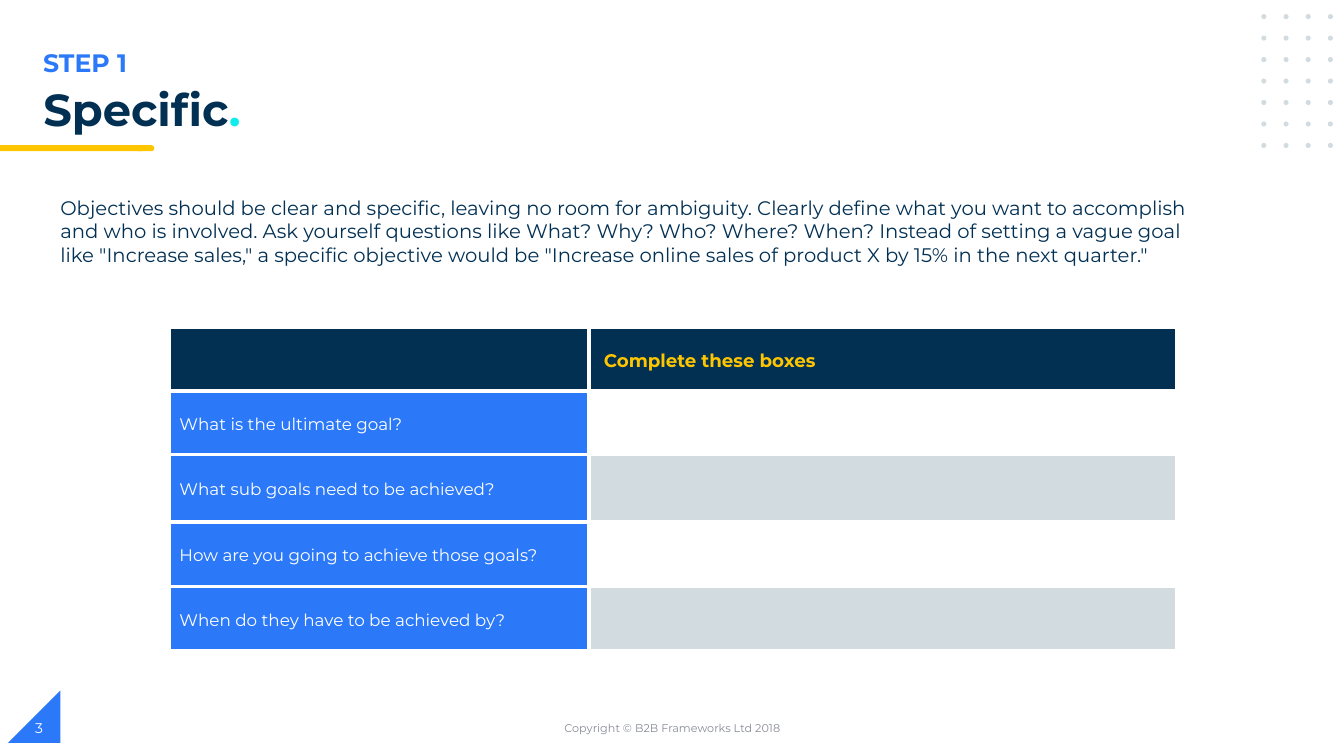
from dataclasses import dataclass

from lxml import etree
from pptx import Presentation
from pptx.dml.color import RGBColor
from pptx.enum.shapes import MSO_SHAPE
from pptx.enum.text import MSO_ANCHOR, MSO_AUTO_SIZE, PP_ALIGN
from pptx.oxml.ns import qn
from pptx.shapes.autoshape import Shape
from pptx.slide import Slide
from pptx.table import _Cell
from pptx.text.text import Font, TextFrame
from pptx.util import Inches, Pt

RECTANGLE = MSO_SHAPE.RECTANGLE
TERMINATOR = MSO_SHAPE.FLOWCHART_TERMINATOR
TRIANGLE = MSO_SHAPE.RIGHT_TRIANGLE
OVAL = MSO_SHAPE.OVAL
TOP, MIDDLE = MSO_ANCHOR.TOP, MSO_ANCHOR.MIDDLE
LEFT, CENTER = PP_ALIGN.LEFT, PP_ALIGN.CENTER
NO_AUTOFIT = MSO_AUTO_SIZE.NONE

FONT_NAME = "Montserrat"
COLORS = {
    "navy": "023053",
    "blue": "2B79F8",
    "yellow": "FFC600",
    "cyan": "0EECEC",
    "mist": "D1DBE0",
    "gray": "888C97",
    "white": "FFFFFF",
}
QUESTIONS = [
    "What is the ultimate goal?",
    "What sub goals need to be achieved?",
    "How are you going to achieve those goals?",
    "When do they have to be achieved by?",
]
COLUMN_WIDTHS = [4.16, 5.83]
ROW_HEIGHTS = [0.63, 0.63, 0.67, 0.64, 0.64]
DOT_COLUMNS, DOT_ROWS = 4, 7


@dataclass
class Block:
    """A filled preset shape, in inches."""

    kind: MSO_SHAPE
    left: float
    top: float
    width: float
    height: float
    color: str


@dataclass
class Label:
    """A one-paragraph text box, in inches and points."""

    text: str
    left: float
    top: float
    width: float
    height: float
    size: float
    color: str
    bold: bool = False
    align: PP_ALIGN = LEFT
    anchor: MSO_ANCHOR = TOP


CORNER = Block(TRIANGLE, 0.08, 6.85, 0.52, 0.52, "blue")
UNDERLINE = [
    Block(TERMINATOR, 1.34, 1.44, 0.19, 0.06, "yellow"),
    Block(RECTANGLE, 0, 1.44, 1.41, 0.06, "yellow"),
]
DOTS = [
    Block(OVAL, 12.51 + 0.22 * column, 0.14 + 0.21 * row + 0.003 * row, 0.05, 0.05, "mist")
    for row in range(DOT_ROWS)
    for column in range(DOT_COLUMNS)
]
LABELS = [
    Label("STEP 1", 0.33, 0.42, 6.69, 0.4, 18, "blue", bold=True),
    Label("Copyright © B2B Frameworks Ltd 2018", 4.42, 7.02, 4.5, 0.4, 8, "gray",
          align=CENTER, anchor=MIDDLE),
    Label("3", 0.25, 7.02, 3, 0.4, 10, "white", anchor=MIDDLE),
    Label(
        "Objectives should be clear and specific, leaving no room for ambiguity. "
        "Clearly define what you want to accomplish and who is involved. "
        "Ask yourself questions like What? Why? Who? Where? When? "
        'Instead of setting a vague goal like "Increase sales," a specific objective would be '
        '"Increase online sales of product X by 15% in the next quarter."',
        0.5, 1.89, 11.66, 0.81, 14, "navy",
    ),
]


def rgb(name: str) -> RGBColor:
    """Look up a palette colour."""
    return RGBColor.from_string(COLORS[name])


def style_font(font: Font, size: float, color: str, bold: bool = False) -> None:
    """Apply typeface, size, colour and weight."""
    font.name = FONT_NAME
    font.size = Pt(size)
    font.bold = bold
    font.color.rgb = rgb(color)


def set_frame(frame: TextFrame, anchor: MSO_ANCHOR) -> None:
    """Make a text frame wrap at a fixed size."""
    frame.word_wrap = True
    frame.auto_size = NO_AUTOFIT
    frame.vertical_anchor = anchor


def add_block(slide: Slide, block: Block) -> Shape:
    """Draw a filled shape without outline or shadow."""
    shape = slide.shapes.add_shape(
        block.kind, Inches(block.left), Inches(block.top),
        Inches(block.width), Inches(block.height),
    )
    shape.shadow.inherit = False
    shape.fill.solid()
    shape.fill.fore_color.rgb = rgb(block.color)
    shape.line.fill.background()
    return shape


def add_label(slide: Slide, label: Label) -> None:
    """Draw a text box."""
    box = slide.shapes.add_textbox(
        Inches(label.left), Inches(label.top), Inches(label.width), Inches(label.height)
    )
    set_frame(box.text_frame, label.anchor)
    para = box.text_frame.paragraphs[0]
    para.text = label.text
    para.alignment = label.align
    style_font(para.font, label.size, label.color, label.bold)


def place_title(slide: Slide) -> None:
    """Position the title and colour its full stop."""
    title = slide.shapes.title
    title.left, title.top = Inches(0.33), Inches(0.82)
    title.width, title.height = Inches(7.76), Inches(0.4)
    set_frame(title.text_frame, TOP)
    para = title.text_frame.paragraphs[0]
    para.alignment = LEFT
    para.line_spacing = 0.9
    for text, color in [("Specific", "navy"), (".", "cyan")]:
        span = para.add_run()
        span.text = text
        style_font(span.font, 32, color, bold=True)


def style_cell(cell: _Cell, fill: str) -> None:
    """Give a cell white borders, a fill and tight margins."""
    properties = cell._tc.get_or_add_tcPr()
    for side in ("a:lnL", "a:lnR", "a:lnT", "a:lnB"):
        line = etree.SubElement(properties, qn(side), w=str(Pt(3)))
        solid = etree.SubElement(line, qn("a:solidFill"))
        etree.SubElement(solid, qn("a:srgbClr"), val=COLORS["white"])
    cell.fill.solid()
    cell.fill.fore_color.rgb = rgb(fill)
    cell.vertical_anchor = MIDDLE
    cell.margin_top = cell.margin_bottom = 0


def write_cell(cell: _Cell, text: str, size: float, color: str, bold: bool = False) -> None:
    """Put one styled paragraph in a cell."""
    para = cell.text_frame.paragraphs[0]
    para.text = text
    para.line_spacing = 1.15
    style_font(para.font, size, color, bold)


def add_question_table(slide: Slide) -> None:
    """Draw the table of questions and answer boxes."""
    table = slide.shapes.add_table(
        len(ROW_HEIGHTS), len(COLUMN_WIDTHS), Inches(1.68), Inches(3.25),
        Inches(sum(COLUMN_WIDTHS)), Inches(sum(ROW_HEIGHTS)),
    ).table
    for column, width in zip(table.columns, COLUMN_WIDTHS):
        column.width = Inches(width)
    for row, height in zip(table.rows, ROW_HEIGHTS):
        row.height = Inches(height)
    for cell in table.rows[0].cells:
        style_cell(cell, "navy")
    heading = table.cell(0, 1)
    heading.margin_left = Inches(0.15)
    write_cell(heading, "Complete these boxes", 13, "yellow", bold=True)
    for index, question in enumerate(QUESTIONS, start=1):
        style_cell(table.cell(index, 0), "blue")
        write_cell(table.cell(index, 0), question, 12, "white")
        style_cell(table.cell(index, 1), "white" if index % 2 else "mist")


def main() -> None:
    """Build and save the slide."""
    deck = Presentation()
    deck.slide_width, deck.slide_height = Inches(13.33), Inches(7.5)
    slide = deck.slides.add_slide(deck.slide_layouts[5])
    place_title(slide)
    corner = add_block(slide, CORNER)
    corner._element.spPr.xfrm.set("flipH", "1")
    for block in UNDERLINE + DOTS:
        add_block(slide, block)
    for label in LABELS:
        add_label(slide, label)
    add_question_table(slide)
    deck.save("out.pptx")


if __name__ == "__main__":
    main()
